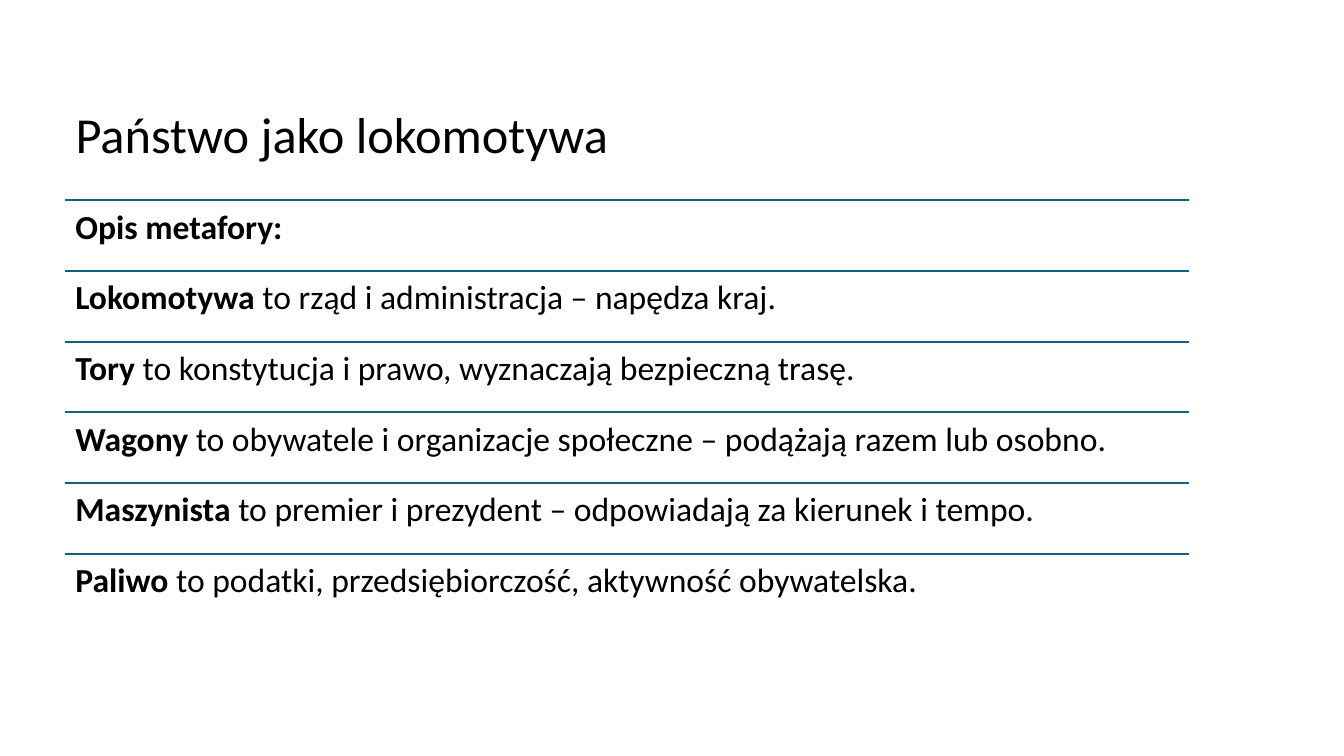
from typing import NamedTuple

from lxml.etree import SubElement
from pptx import Presentation
from pptx.dml.color import RGBColor
from pptx.enum.shapes import MSO_CONNECTOR
from pptx.enum.text import MSO_ANCHOR, MSO_AUTO_SIZE, PP_ALIGN
from pptx.oxml.ns import qn
from pptx.slide import Slide
from pptx.text.text import _Paragraph as Paragraph
from pptx.util import Cm, Length, Pt

BLACK = RGBColor(0x00, 0x00, 0x00)
TEAL = RGBColor(0x15, 0x60, 0x82)
FONT_NAME = "Calibri"

LEFT = Cm(1.65)
ROWS_TOP = Cm(5.05)
ROW_WIDTH = Cm(28.32)
ROW_HEIGHT = Cm(1.78)
ROW_INSET = Cm(0.25)


class MetaphorRow(NamedTuple):
    term: str
    meaning: str = ""


METAPHOR_ROWS = [
    MetaphorRow("Opis metafory:"),
    MetaphorRow("Lokomotywa", " to rząd i administracja – napędza kraj."),
    MetaphorRow("Tory", " to konstytucja i prawo, wyznaczają bezpieczną trasę."),
    MetaphorRow("Wagony", " to obywatele i organizacje społeczne – podążają razem lub osobno."),
    MetaphorRow("Maszynista", " to premier i prezydent – odpowiadają za kierunek i tempo."),
    MetaphorRow("Paliwo", " to podatki, przedsiębiorczość, aktywność obywatelska."),
]


def add_text(paragraph: Paragraph, text: str, *, size: int, bold: bool = False) -> None:
    run = paragraph.add_run()
    run.text = text
    run.font.name = FONT_NAME
    run.font.size = Pt(size)
    run.font.bold = bold
    run.font.color.rgb = BLACK


def format_title(slide: Slide, text: str) -> None:
    title = slide.shapes.title
    title.left, title.top, title.width, title.height = LEFT, Cm(2.46), Cm(17.63), Cm(1.8)
    frame = title.text_frame
    frame.word_wrap = True
    frame.auto_size = MSO_AUTO_SIZE.SHAPE_TO_FIT_TEXT
    frame.vertical_anchor = MSO_ANCHOR.TOP
    paragraph = frame.paragraphs[0]
    paragraph.alignment = PP_ALIGN.LEFT
    add_text(paragraph, text, size=36)


def add_rule(slide: Slide, top: Length) -> None:
    rule = slide.shapes.add_connector(MSO_CONNECTOR.STRAIGHT, LEFT, top, LEFT + ROW_WIDTH, top)
    rule.line.color.rgb = TEAL
    rule.line.width = Pt(1.5)
    SubElement(rule._element.spPr, qn("a:effectLst"))


def add_row(slide: Slide, row: MetaphorRow, top: Length) -> None:
    add_rule(slide, top)
    frame = slide.shapes.add_textbox(LEFT, top, ROW_WIDTH, ROW_HEIGHT).text_frame
    frame.word_wrap = True
    frame.margin_left = frame.margin_top = ROW_INSET
    frame.margin_right = frame.margin_bottom = ROW_INSET
    paragraph = frame.paragraphs[0]
    paragraph.line_spacing = 0.9
    add_text(paragraph, row.term, size=24, bold=True)
    if row.meaning:
        add_text(paragraph, row.meaning, size=24)


def main() -> None:
    presentation = Presentation()
    presentation.slide_width, presentation.slide_height = Cm(33.87), Cm(19.05)
    title_only_layout = presentation.slide_layouts[5]
    slide = presentation.slides.add_slide(title_only_layout)
    format_title(slide, "Państwo jako lokomotywa")
    for index, row in enumerate(METAPHOR_ROWS):
        add_row(slide, row, ROWS_TOP + index * ROW_HEIGHT)
    presentation.save("out.pptx")


if __name__ == "__main__":
    main()
